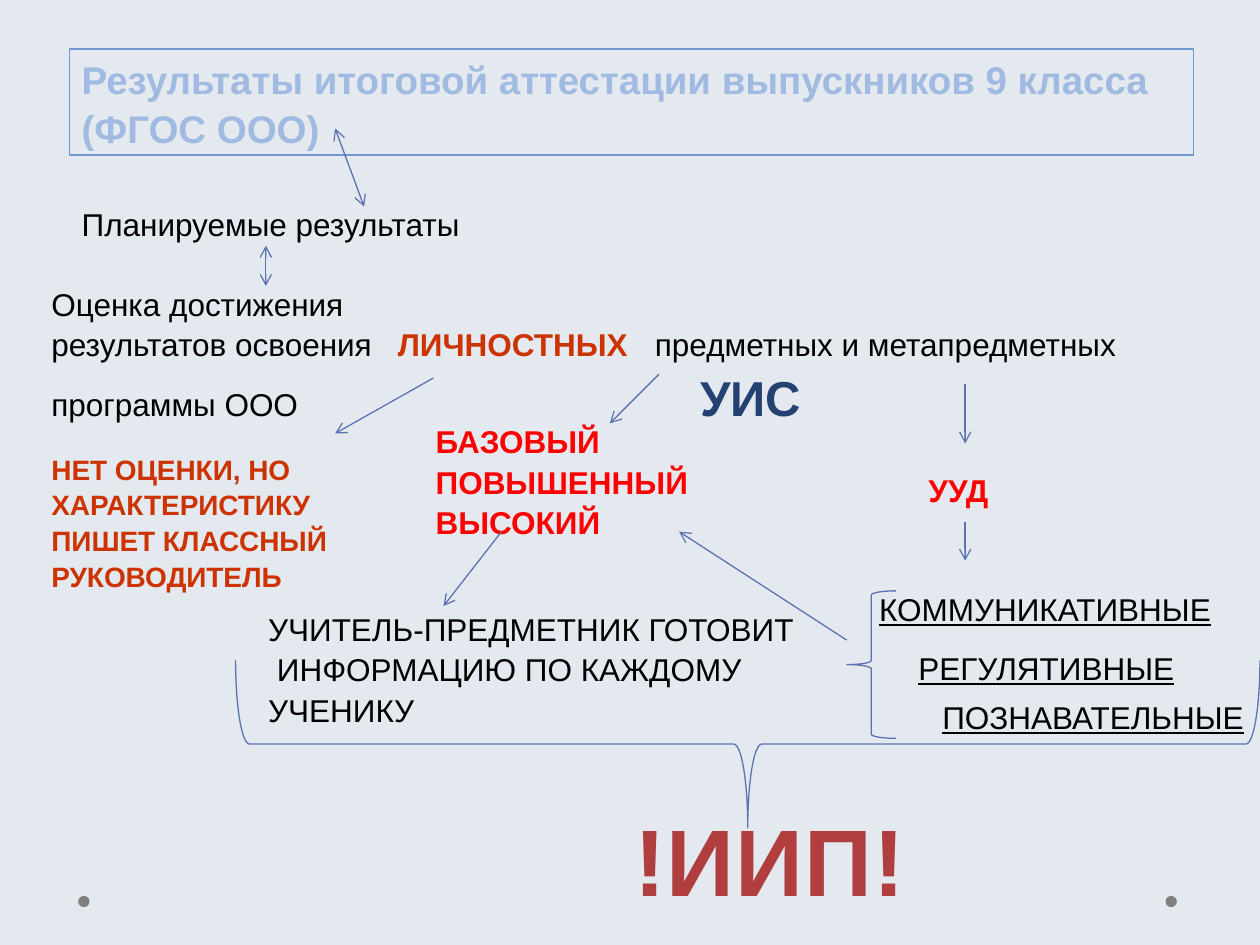
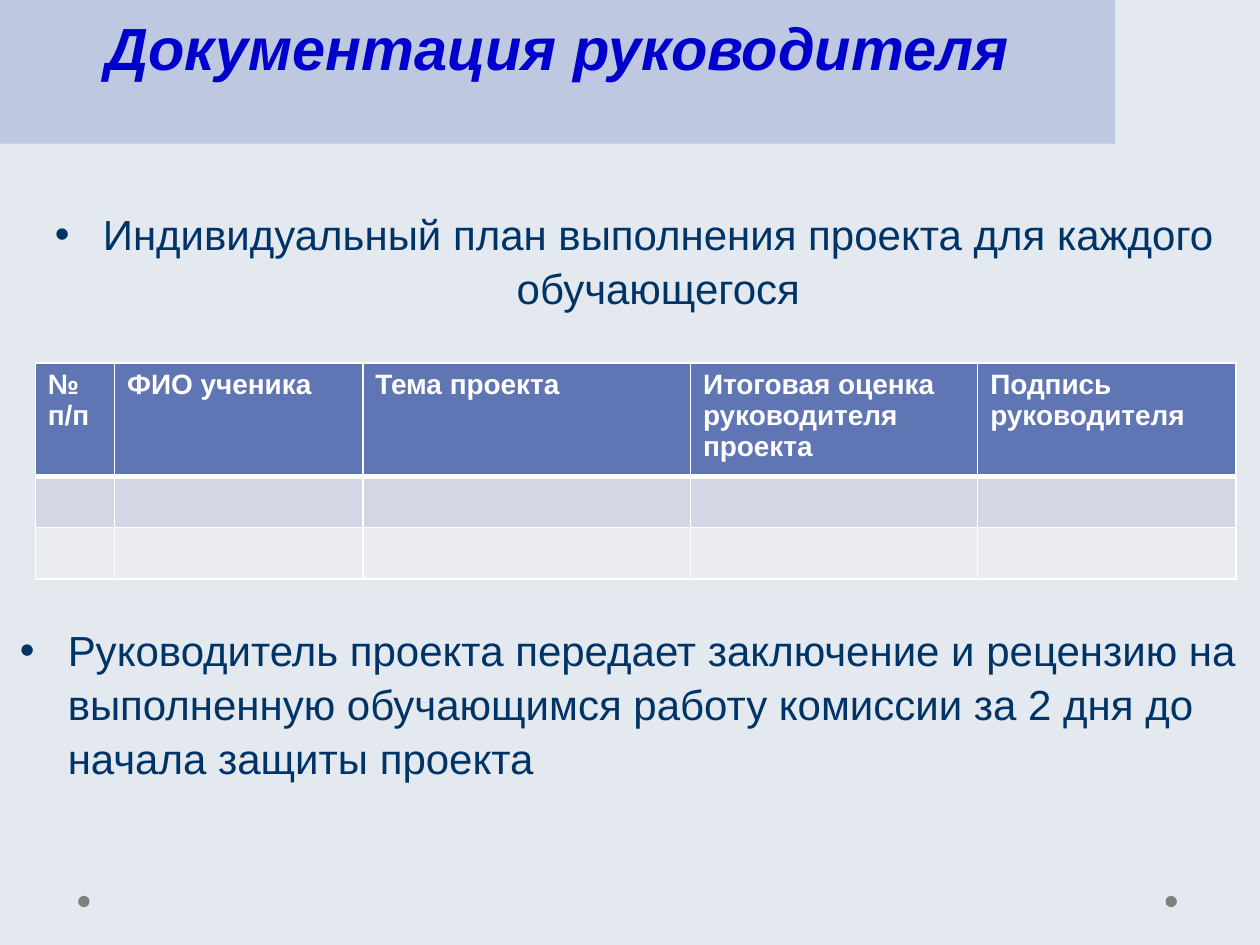
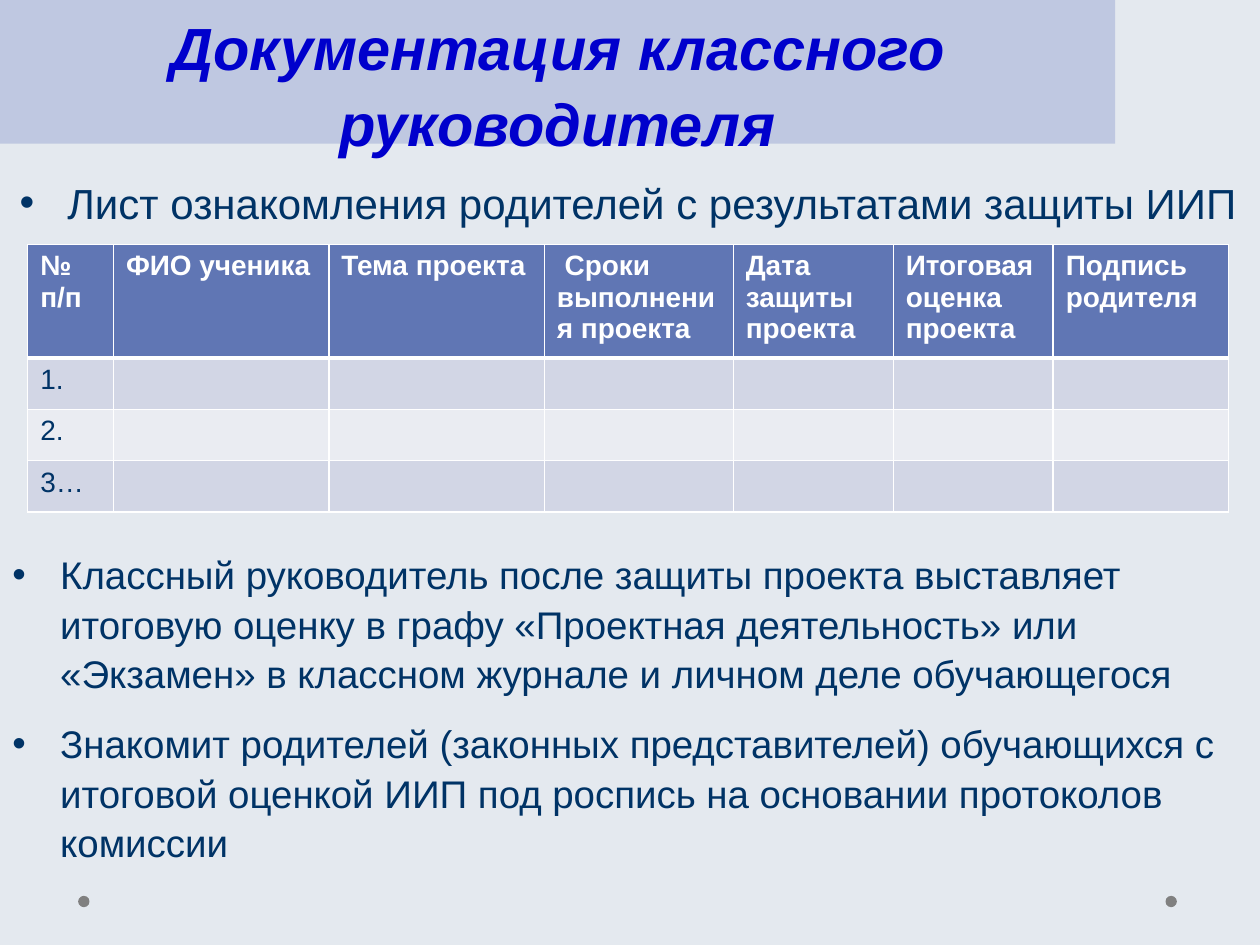
import pptx
import pptx.util
import pptx.dml.color
import pptx.enum.shapes
import pptx.enum.text
import pptx.oxml
import pptx.oxml.ns

RGBColor = pptx.dml.color.RGBColor
Pt = pptx.util.Pt
SHAPE = pptx.enum.shapes.MSO_SHAPE
ALIGN = pptx.enum.text.PP_ALIGN
ANCHOR = pptx.enum.text.MSO_ANCHOR
qn = pptx.oxml.ns.qn

PAPER = RGBColor(0xE4, 0xE9, 0xEF)
DOT = RGBColor(0x80, 0x80, 0x80)
BAND = RGBColor(0xBF, 0xC8, 0xE1)
HEAD = RGBColor(0x60, 0x76, 0xB4)
ODD = RGBColor(0xD2, 0xD6, 0xE5)
EVEN = RGBColor(0xEA, 0xEC, 0xF2)
LINE = RGBColor(0x5C, 0x72, 0xB2)
FRAME = RGBColor(0x70, 0x97, 0xD3)
PALE = RGBColor(0xA0, 0xBA, 0xE1)
BLUE = RGBColor(0x00, 0x00, 0xCC)
NAVY = RGBColor(0x00, 0x33, 0x66)
STEEL = RGBColor(0x23, 0x42, 0x71)
RUST = RGBColor(0xCC, 0x33, 0x00)
RED = RGBColor(0xFF, 0x00, 0x00)
BRICK = RGBColor(0xB0, 0x3E, 0x3E)
BLACK = RGBColor(0x00, 0x00, 0x00)
WHITE = RGBColor(0xFF, 0xFF, 0xFF)

FONT = "Arial"
WIDE, HIGH = pptx.util.Inches(10), pptx.util.Inches(7.5)
COLS, ROWS = 100, 75
HANG = 3.8


def col(n):
    """Return the length of n grid columns."""
    return round(WIDE * n / COLS)


def row(n):
    """Return the length of n grid rows."""
    return round(HIGH * n / ROWS)


def area(x, y, w, h):
    """Return a box of grid cells as slide lengths."""
    return col(x), row(y), col(w), row(h)


def add_xml(node, tag, **attrs):
    """Append a DrawingML element to a node."""
    child = pptx.oxml.parse_xml(f'<a:{tag} {pptx.oxml.ns.nsdecls("a")}/>')
    for key, value in attrs.items():
        child.set(key, str(value))
    node.append(child)
    return child


def style(run, size, color, bold=False, italic=False, under=False):
    """Set the look of one run."""
    font = run.font
    font.name, font.size, font.bold = FONT, Pt(size), bold
    font.color.rgb = color
    if italic:
        font.italic = True
    if under:
        font.underline = True


def bullet(para):
    """Give a paragraph a hanging bullet."""
    props = para._p.get_or_add_pPr()
    props.set("marL", str(col(HANG)))
    props.set("indent", str(-col(HANG)))
    add_xml(props, "buFont", typeface=FONT)
    add_xml(props, "buChar", char="•")


def set_tabs(para, stops):
    """Put left tab stops on a paragraph."""
    tabs = add_xml(para._p.get_or_add_pPr(), "tabLst")
    for stop in stops:
        add_xml(tabs, "tab", pos=col(stop), algn="l")


def write(frame, lines, size, color, align=ALIGN.LEFT, dots=False, gap=0, **look):
    """Fill a text frame with equally styled paragraphs."""
    frame.text = "\n".join(lines)
    for index, para in enumerate(frame.paragraphs):
        para.alignment = align
        para.line_spacing = 1.07
        if index and gap:
            para.space_before = Pt(gap)
        if dots:
            bullet(para)
        for run in para.runs:
            style(run, size, color, **look)


def add_text(slide, box, lines, size, color, wrap=True, **look):
    """Add a text box."""
    frame = slide.shapes.add_textbox(*area(*box)).text_frame
    frame.word_wrap = wrap
    write(frame, lines, size, color, **look)
    return frame


def add_form(slide, kind, box, fill=None, line=None):
    """Add a preset shape without shadow."""
    form = slide.shapes.add_shape(kind, *area(*box))
    form.shadow.inherit = False
    if fill is None:
        form.fill.background()
    else:
        form.fill.solid()
        form.fill.fore_color.rgb = fill
    if line is None:
        form.line.fill.background()
    else:
        form.line.color.rgb = line
        form.line.width = Pt(0.75)
    return form


def add_arrow(slide, start, end, both=False):
    """Draw an arrow between two grid points."""
    link = slide.shapes.add_connector(pptx.enum.shapes.MSO_CONNECTOR.STRAIGHT,
                                      col(start[0]), row(start[1]), col(end[0]), row(end[1]))
    link.line.color.rgb = LINE
    link.line.width = Pt(0.75)
    edge = link.line._get_or_add_ln()
    if both:
        add_xml(edge, "headEnd", type="arrow")
    add_xml(edge, "tailEnd", type="arrow")
    add_xml(link._element.spPr, "effectLst")


def add_band(slide, title):
    """Add the title band."""
    band = add_form(slide, SHAPE.RECTANGLE, (0, 0, 88.5, 11.4), BAND)
    band.text_frame.vertical_anchor = ANCHOR.TOP
    write(band.text_frame, [title], 34, BLUE, align=ALIGN.CENTER, bold=True, italic=True)


def edge_cell(cell, below):
    """Draw white borders round a cell."""
    props = cell._tc.get_or_add_tcPr()
    fill = props.find(qn("a:solidFill"))
    for side, width in (("lnL", 1), ("lnR", 1), ("lnT", 1), ("lnB", below)):
        edge = add_xml(props, side, w=int(Pt(width)))
        add_xml(add_xml(edge, "solidFill"), "srgbClr", val=WHITE)
        fill.addprevious(edge)


def add_grid(slide, x, y, widths, heads, marks):
    """Add a table with a header and one row per mark."""
    heights = [9] + [4.08] * len(marks)
    box = area(x, y, sum(widths), sum(heights))
    table = slide.shapes.add_table(len(heights), len(widths), *box).table
    for part, width in zip(table.columns, widths):
        part.width = col(width)
    for part, height in zip(table.rows, heights):
        part.height = row(height)
    texts = [heads] + [[mark] + [""] * (len(heads) - 1) for mark in marks]
    for r, line in enumerate(texts):
        for c, text in enumerate(line):
            cell = table.cell(r, c)
            cell.fill.solid()
            cell.fill.fore_color.rgb = HEAD if r == 0 else ODD if r % 2 else EVEN
            edge_cell(cell, 1 if r else 3)
            cell.text_frame.text = text
            for run in cell.text_frame.paragraphs[0].runs:
                style(run, 16, NAVY if r else WHITE, bold=r == 0)


def add_page(deck):
    """Add a blank slide with the two footer dots."""
    slide = deck.slides.add_slide(deck.slide_layouts[6])
    for x in (92.5, 6.2):
        add_form(slide, SHAPE.OVAL, (x, 71.1, 0.9, 0.9), DOT)
    return slide


def add_goals(slide):
    """Add the text on assessing personal and subject results."""
    frame = add_text(slide, (3.1, 21.9, 93, 11.8),
                     ["Оценка достижения", "результатов освоения", "программы ООО"], 18, BLACK)
    second, third = frame.paragraphs[1:]
    set_tabs(second, (27.5, 47.9))
    set_tabs(third, (51.5,))
    for para, text, size, color, bold in (
            (second, "\tЛИЧНОСТНЫХ", 18, RUST, True),
            (second, "\tпредметных и метапредметных", 18, BLACK, False),
            (third, "\tУИС", 28, STEEL, True)):
        run = para.add_run()
        run.text = text
        style(run, size, color, bold=bold)


def build_scheme(deck):
    """Build the scheme of final results."""
    slide = add_page(deck)
    title = add_form(slide, SHAPE.RECTANGLE, (5.5, 3.9, 89.2, 8.4), line=FRAME)
    write(title.text_frame, ["Результаты итоговой аттестации выпускников 9 класса (ФГОС ООО)"],
          22, PALE, bold=True)
    add_text(slide, (5.5, 15.6, 33.6, 4), ["Планируемые результаты"], 18, BLACK)
    add_goals(slide)
    add_text(slide, (72.7, 36.7, 6.8, 4), ["УУД"], 18, RED, wrap=False, bold=True)
    for x, y, w, text in ((68.8, 46.1, 28.6, "КОММУНИКАТИВНЫЕ"),
                          (71.9, 50.8, 24.2, "РЕГУЛЯТИВНЫЕ"),
                          (73.8, 54.7, 26.2, "ПОЗНАВАТЕЛЬНЫЕ")):
        add_text(slide, (x, y, w, 4), [text], 18, BLACK, wrap=False, under=True)
    add_text(slide, (33.6, 32.8, 23.4, 10.1), ["БАЗОВЫЙ", "ПОВЫШЕННЫЙ", "ВЫСОКИЙ"],
             18, RED, bold=True)
    add_text(slide, (3.1, 35.2, 29.7, 11.8),
             ["НЕТ ОЦЕНКИ, НО", "ХАРАКТЕРИСТИКУ", "ПИШЕТ КЛАССНЫЙ", "РУКОВОДИТЕЛЬ"],
             16, RUST, bold=True)
    add_text(slide, (20.3, 47.7, 46.1, 10.1),
             ["УЧИТЕЛЬ-ПРЕДМЕТНИК ГОТОВИТ", " ИНФОРМАЦИЮ ПО КАЖДОМУ УЧЕНИКУ"], 18, BLACK)
    brace = add_form(slide, SHAPE.LEFT_BRACE, (52.7, 18.4, 13.3, 81.3), line=LINE)
    brace.rotation = 270
    add_form(slide, SHAPE.LEFT_BRACE, (67.2, 46.9, 3.9, 11.7), line=LINE)
    goal = add_text(slide, (49.2, 62.5, 23.8, 10.1), ["!ИИП!"], 54, BRICK,
                    wrap=False, align=ALIGN.CENTER, bold=True)
    goal.paragraphs[0].runs[0]._r.get_or_add_rPr().set("spc", "50")
    for start, end in (((76.6, 41.4), (76.6, 44.5)), ((52.3, 29.7), (48.4, 33.6)),
                       ((76.6, 30.5), (76.6, 35.2)), ((34.4, 30), (26.6, 34.4)),
                       ((39.8, 42.2), (35.2, 48.1)), ((67.2, 50.8), (53.9, 42.2))):
        add_arrow(slide, start, end)
    for start, end in (((21.1, 19.5), (21.1, 22.7)), ((26.6, 10.2), (28.9, 16.4))):
        add_arrow(slide, start, end, both=True)


def build_lead(deck):
    """Build the slide on the project leader's papers."""
    slide = add_page(deck)
    add_band(slide, "Документация руководителя")
    add_text(slide, (0.5, 15.8, 99.7, 9.1),
             ["Индивидуальный план выполнения проекта для каждого обучающегося"],
             24, NAVY, align=ALIGN.CENTER, dots=True)
    add_grid(slide, 2.8, 28.8, (6.3, 19.7, 26, 22.8, 20.5),
             ["№ п/п", "ФИО ученика", "Тема проекта", "Итоговая оценка руководителя проекта",
              "Подпись руководителя"], ["", ""])
    add_text(slide, (0.6, 48.8, 99.7, 13.1),
             ["Руководитель проекта передает заключение и рецензию на выполненную "
              "обучающимся работу комиссии за 2 дня до начала защиты проекта"],
             24, NAVY, dots=True)


def build_class(deck):
    """Build the slide on the class teacher's papers."""
    slide = add_page(deck)
    add_band(slide, "Документация классного руководителя")
    add_text(slide, (0, 13.3, 99.7, 5.1),
             ["Лист ознакомления родителей с результатами защиты ИИП"],
             24, NAVY, align=ALIGN.CENTER, dots=True)
    add_grid(slide, 2.2, 19.4, (6.8, 17.1, 17.1, 15, 12.7, 12.7, 13.9),
             ["№ п/п", "ФИО ученика", "Тема проекта", " Сроки выполнения проекта",
              "Дата защиты проекта", "Итоговая оценка проекта", "Подпись родителя"],
             ["1.", "2.", "3…"])
    add_text(slide, (0, 43, 99.7, 28.9),
             ["Классный руководитель после защиты проекта выставляет итоговую оценку в графу "
              "«Проектная деятельность» или «Экзамен» в классном журнале и личном деле "
              "обучающегося",
              "Знакомит родителей (законных представителей) обучающихся с итоговой оценкой "
              "ИИП под роспись на основании протоколов комиссии"],
             22, NAVY, dots=True, gap=12)


def main():
    """Build and save the deck."""
    deck = pptx.Presentation()
    deck.slide_width, deck.slide_height = WIDE, HIGH
    back = deck.slide_master.background.fill
    back.solid()
    back.fore_color.rgb = PAPER
    build_scheme(deck)
    build_lead(deck)
    build_class(deck)
    deck.save("out.pptx")


if __name__ == "__main__":
    main()
